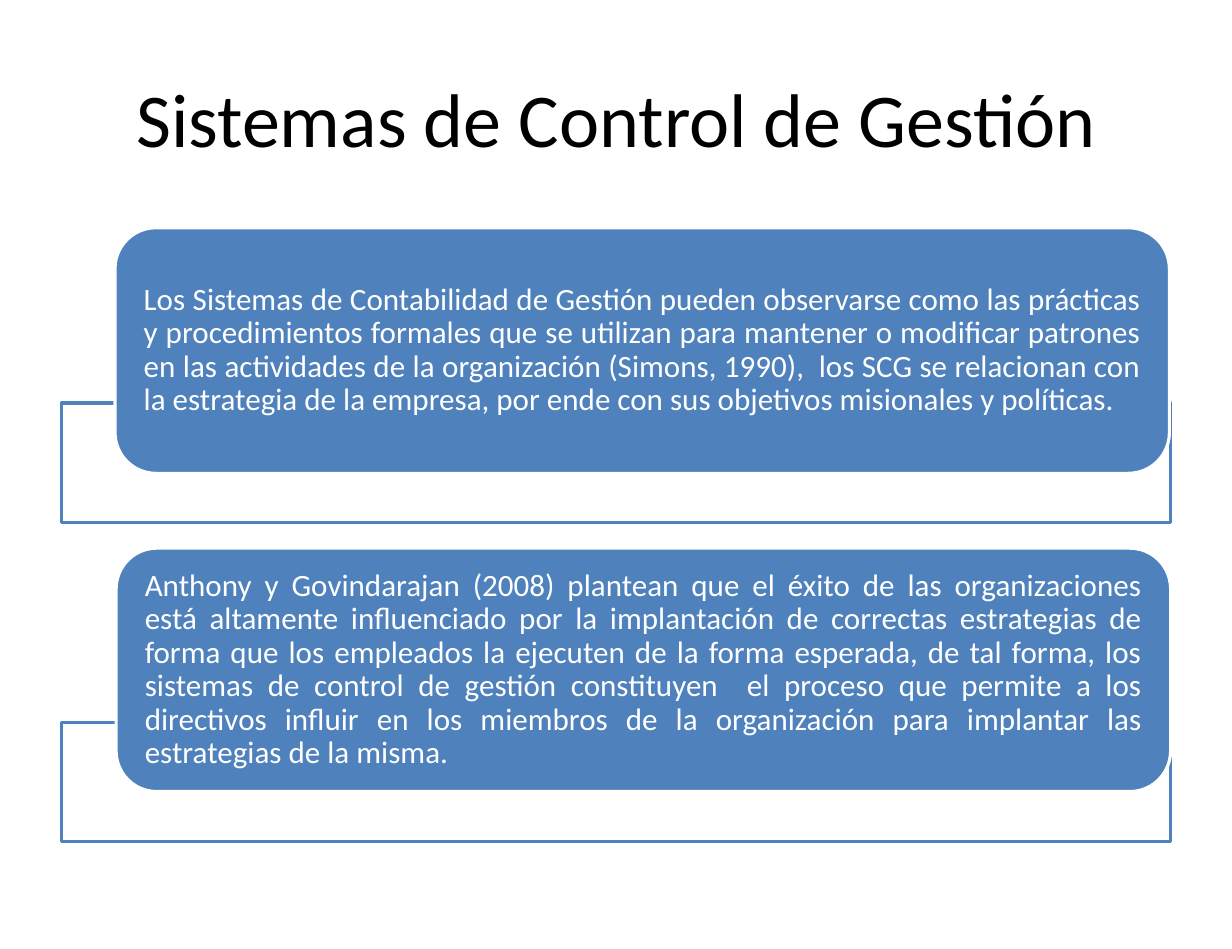
"""Build the slide on management control systems."""
from pptx import Presentation
from pptx.dml.color import RGBColor
from pptx.enum.shapes import MSO_SHAPE
from pptx.enum.text import MSO_ANCHOR, PP_ALIGN
from pptx.util import Inches, Pt

RECT = MSO_SHAPE.RECTANGLE
ROUND = MSO_SHAPE.ROUNDED_RECTANGLE
MIDDLE = MSO_ANCHOR.MIDDLE
CENTER = PP_ALIGN.CENTER
JUSTIFY = PP_ALIGN.JUSTIFY
BLUE, WHITE, BLACK = "4F81BD", "FFFFFF", "000000"

CARDS = [
    (1.03, 2.04, 2.2, 3.61,
     "Los Sistemas de Contabilidad de Gestión pueden observarse como las "
     "prácticas y procedimientos formales que se utilizan para mantener o "
     "modificar patrones en las actividades de la organización (Simons, "
     "1990),  los SCG se relacionan con la estrategia de la empresa, por "
     "ende con sus objetivos misionales y políticas."),
    (1.04, 4.91, 2.18, 6.47,
     "Anthony y Govindarajan (2008) plantean que el éxito de las "
     "organizaciones está altamente influenciado por la implantación de "
     "correctas estrategias de forma que los empleados la ejecuten de la "
     "forma esperada, de tal forma, los sistemas de control de gestión "
     "constituyen  el proceso que permite a los directivos influir en los "
     "miembros de la organización para implantar las estrategias de la "
     "misma."),
]


def paint(kind, left, top, width, height, fill, line):
    shape = slide.shapes.add_shape(
        kind, Inches(left), Inches(top), Inches(width), Inches(height))
    shape.shadow.inherit = False
    shape.fill.solid()
    shape.fill.fore_color.rgb = RGBColor.from_string(fill)
    shape.line.color.rgb = RGBColor.from_string(line)
    shape.line.width = Pt(2)
    return shape


def write(shape, text, size, color, align, side, edge):
    frame = shape.text_frame
    frame.word_wrap = True
    frame.vertical_anchor = MIDDLE
    frame.margin_left = frame.margin_right = Inches(side)
    frame.margin_top = frame.margin_bottom = Inches(edge)
    para = frame.paragraphs[0]
    para.alignment = align
    run = para.add_run()
    run.text = text
    run.font.name = "Calibri"
    run.font.size = Pt(size)
    run.font.color.rgb = RGBColor.from_string(color)
    return para


deck = Presentation()
deck.slide_width = Inches(11.03)
deck.slide_height = Inches(8.5)
slide = deck.slides.add_slide(deck.slide_layouts[6])

title = slide.shapes.add_textbox(
    Inches(0.55), Inches(0.34), Inches(9.93), Inches(1.42))
write(title, "Sistemas de Control de Gestión", 49, BLACK, CENTER, 0.11, 0.06)

for left, top, height, base, text in CARDS:
    paint(RECT, 0.55, base, 9.93, 1.07, WHITE, BLUE)
    card = paint(ROUND, left, top, 9.44, height, BLUE, WHITE)
    para = write(card, text, 20, WHITE, JUSTIFY, 0.15, 0)
    para.line_spacing = 0.9

deck.save("out.pptx")
